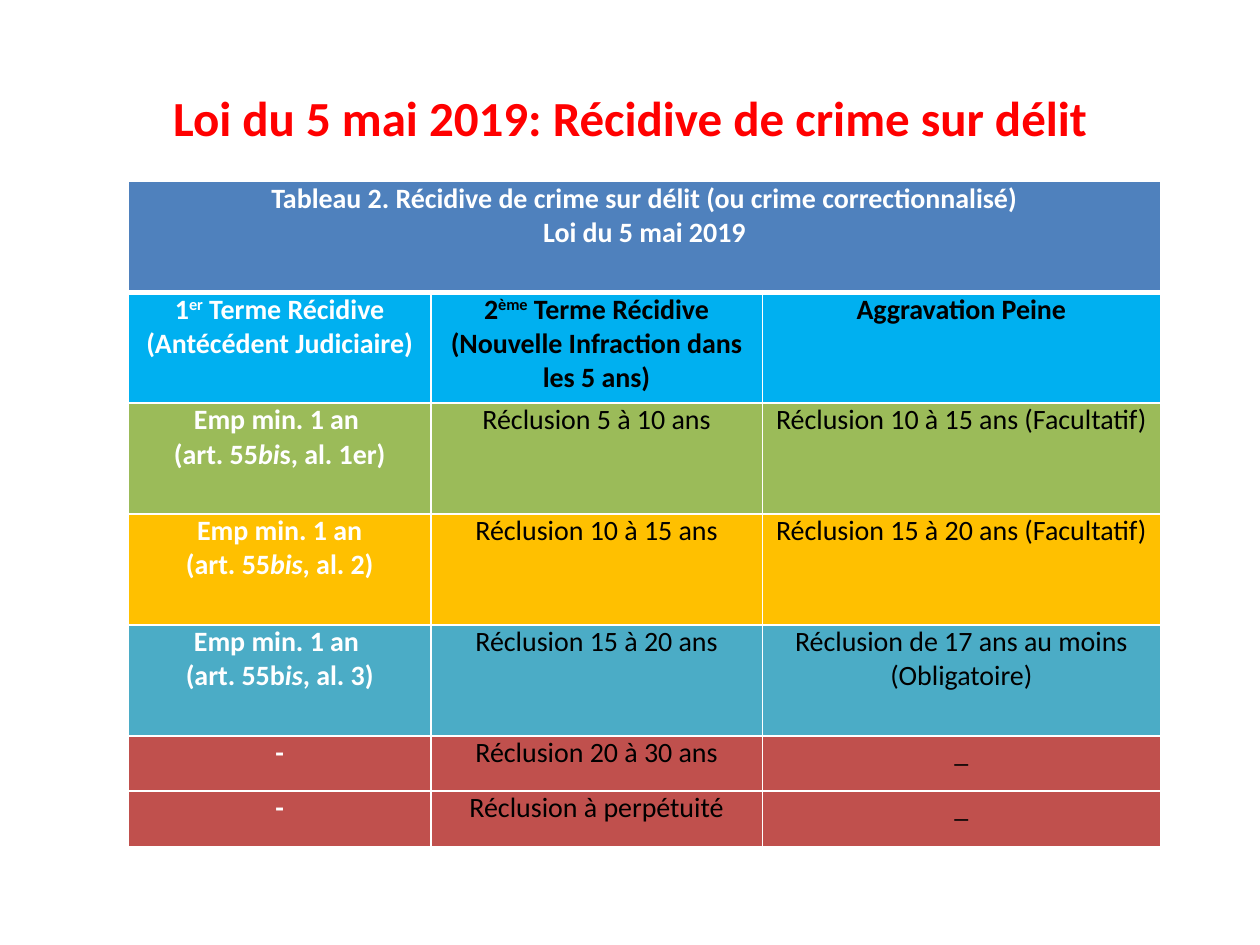
import dataclasses

import lxml.etree
import pptx
import pptx.dml.color
import pptx.enum.text
import pptx.oxml.ns
import pptx.util


@dataclasses.dataclass(frozen=True)
class Theme:
    font: str = "Calibri"
    title_size: int = 28
    table_size: int = 16
    title: str = "FF0000"
    light: str = "FFFFFF"
    dark: str = "000000"
    banner: str = "4F81BD"
    heading: str = "00B0F0"
    green: str = "9BBB59"
    amber: str = "FFC000"
    teal: str = "4BACC6"
    red: str = "C0504D"


THEME = Theme()
SLIDE_WIDTH, SLIDE_HEIGHT = 10, 7.5
COLUMN_WIDTHS = (2.4, 2.63, 3.16)
ROW_UNIT = 0.44
ROW_UNITS = (2, 2, 2, 2, 2, 1, 1)
TABLE_LEFT, TABLE_TOP = 1.02, 1.44
RAISED, ITALIC = "^", "*"

BANNER = "Tableau 2. Récidive de crime sur délit (ou crime correctionnalisé)\nLoi du 5 mai 2019"
HEADINGS = (
    "1^er^ Terme Récidive\n(Antécédent Judiciaire)",
    "2^ème^ Terme Récidive\n(Nouvelle Infraction dans les 5 ans)",
    "Aggravation Peine",
)
PENALTIES = (
    (THEME.green, "Emp min. 1 an \n(art. 55*bi*s, al. 1er)",
     "Réclusion 5 à 10 ans", "Réclusion 10 à 15 ans (Facultatif)"),
    (THEME.amber, "Emp min. 1 an\n(art. 55*bis*, al. 2)",
     "Réclusion 10 à 15 ans", "Réclusion 15 à 20 ans (Facultatif)"),
    (THEME.teal, "Emp min. 1 an \n(art. 55b*is*, al. 3)",
     "Réclusion 15 à 20 ans", "Réclusion de 17 ans au moins (Obligatoire)"),
    (THEME.red, "-", "Réclusion 20 à 30 ans", "_"),
    (THEME.red, "-", "Réclusion à perpétuité", "_"),
)


def rgb(color):
    return pptx.dml.color.RGBColor.from_string(color)


def add_span(para, text, size, color, bold):
    span = para.add_run()
    span.text = text
    span.font.name = THEME.font
    span.font.size = pptx.util.Pt(size)
    span.font.bold = bold
    span.font.color.rgb = rgb(color)
    return span


def write_text(frame, text, size, color, bold):
    for index, line in enumerate(text.split("\n")):
        para = frame.paragraphs[0] if index == 0 else frame.add_paragraph()
        para.alignment = pptx.enum.text.PP_ALIGN.CENTER
        marker = RAISED if RAISED in line else ITALIC
        for position, piece in enumerate(line.split(marker)):
            span = add_span(para, piece, size, color, bold)
            if position % 2 and marker == RAISED:
                span.font._element.set("baseline", "30000")
            elif position % 2:
                span.font.italic = True


def add_title(page, text):
    box = page.shapes.add_textbox(
        pptx.util.Inches(SLIDE_WIDTH * 0.05), pptx.util.Inches(SLIDE_HEIGHT * 0.04),
        pptx.util.Inches(SLIDE_WIDTH * 0.9), pptx.util.Inches(SLIDE_HEIGHT / 6))
    box.text_frame.word_wrap = True
    box.text_frame.vertical_anchor = pptx.enum.text.MSO_ANCHOR.MIDDLE
    write_text(box.text_frame, text, THEME.title_size, THEME.title, True)


def set_borders(cell, bottom_width):
    properties = cell._tc.get_or_add_tcPr()
    widths = {"a:lnL": 1, "a:lnR": 1, "a:lnT": 1, "a:lnB": bottom_width}
    for position, (tag, width) in enumerate(widths.items()):
        line = lxml.etree.Element(pptx.oxml.ns.qn(tag), w=str(pptx.util.Pt(width)))
        fill = lxml.etree.SubElement(line, pptx.oxml.ns.qn("a:solidFill"))
        lxml.etree.SubElement(fill, pptx.oxml.ns.qn("a:srgbClr"), val=THEME.light)
        properties.insert(position, line)


def style_cell(cell, fill, bottom_width=1):
    cell.margin_left = cell.margin_right = pptx.util.Inches(0.07)
    cell.margin_top = cell.margin_bottom = 0
    cell.fill.solid()
    cell.fill.fore_color.rgb = rgb(fill)
    set_borders(cell, bottom_width)


def fill_cell(cell, text, fill, color, bold):
    style_cell(cell, fill)
    write_text(cell.text_frame, text, THEME.table_size, color, bold)


def add_grid(page):
    table = page.shapes.add_table(
        len(ROW_UNITS), len(COLUMN_WIDTHS),
        pptx.util.Inches(TABLE_LEFT), pptx.util.Inches(TABLE_TOP),
        pptx.util.Inches(sum(COLUMN_WIDTHS)),
        pptx.util.Inches(ROW_UNIT * sum(ROW_UNITS))).table
    for column, width in zip(table.columns, COLUMN_WIDTHS):
        column.width = pptx.util.Inches(width)
    for row, units in zip(table.rows, ROW_UNITS):
        row.height = pptx.util.Inches(ROW_UNIT * units)
    return table


def add_penalty_table(page):
    table = add_grid(page)
    banner = table.cell(0, 0)
    banner.merge(table.cell(0, len(COLUMN_WIDTHS) - 1))
    for cell in table.rows[0].cells:
        style_cell(cell, THEME.banner, bottom_width=3)
    write_text(banner.text_frame, BANNER, THEME.table_size, THEME.light, True)

    for column, text in enumerate(HEADINGS):
        color = THEME.dark if column else THEME.light
        fill_cell(table.cell(1, column), text, THEME.heading, color, True)
    for row, (fill, *texts) in enumerate(PENALTIES, start=2):
        for column, text in enumerate(texts):
            color = THEME.dark if column else THEME.light
            fill_cell(table.cell(row, column), text, fill, color, column == 0)


def main():
    deck = pptx.Presentation()
    deck.slide_width = pptx.util.Inches(SLIDE_WIDTH)
    deck.slide_height = pptx.util.Inches(SLIDE_HEIGHT)
    page = deck.slides.add_slide(deck.slide_layouts[6])
    add_title(page, "Loi du 5 mai 2019: Récidive de crime sur délit")
    add_penalty_table(page)
    deck.save("out.pptx")


if __name__ == "__main__":
    main()
